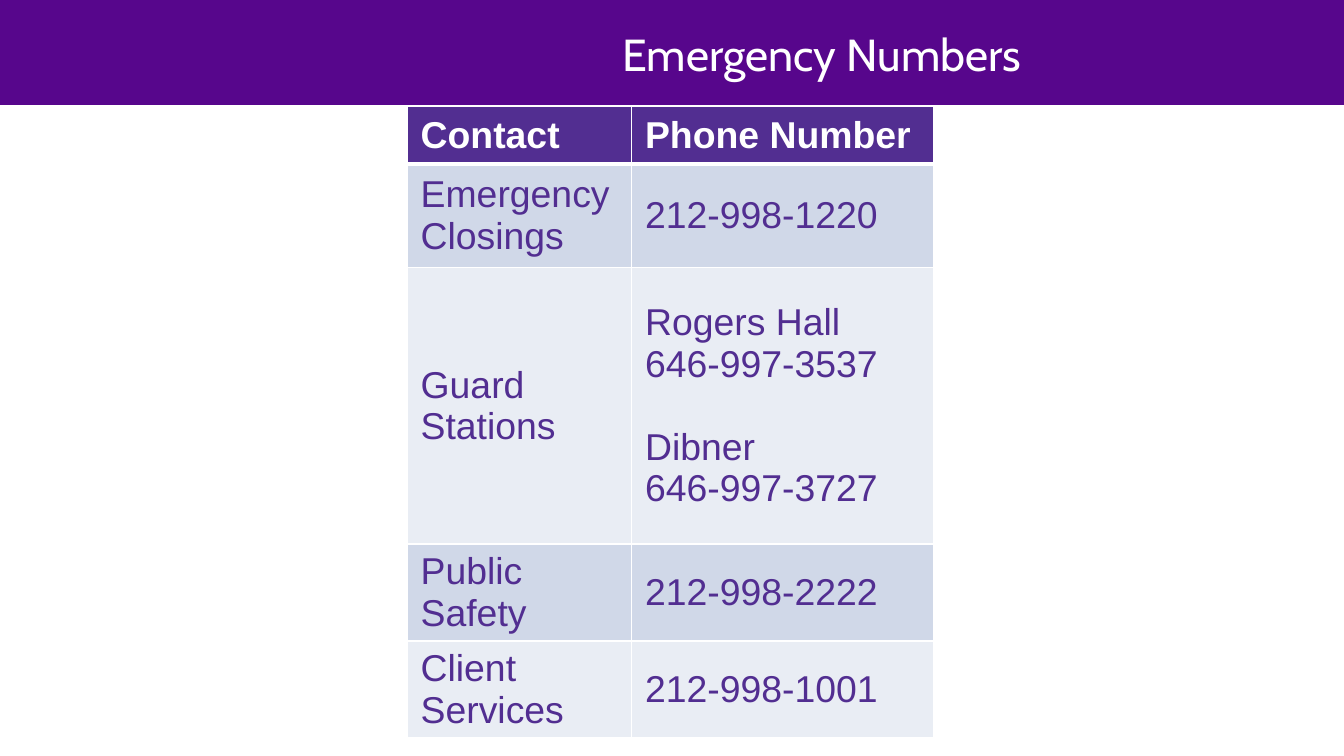
from lxml import etree
from pptx import Presentation, util as u
from pptx.dml.color import RGBColor
from pptx.enum import shapes, text
from pptx.oxml import ns

WHITE = RGBColor(0xFF, 0xFF, 0xFF)
BAND = RGBColor(0x57, 0x06, 0x8C)
VIOLET = RGBColor(0x52, 0x2E, 0x91)
ROW_DARK = RGBColor(0xD0, 0xD8, 0xE8)
ROW_LIGHT = RGBColor(0xE9, 0xED, 0xF4)

CONTACTS = [
    ("Contact", [["Phone Number"]]),
    ("Emergency Closings", [["212-998-1220"]]),
    ("Guard Stations", [["Rogers Hall", "646-997-3537"], ["Dibner", "646-997-3727"]]),
    ("Public Safety", [["212-998-2222"]]),
    ("Client Services", [["212-998-1001"]]),
]
COLUMN_WIDTHS = [1.67, 2.25]
ROW_HEIGHTS = [0.43, 0.77, 2.06, 0.72, 0.72]


class SlideBuilder:
    """Holds the style and the current slide, and adds each kind of element."""

    def __init__(self, slide, heading_font="Cabin", table_font="Arial"):
        self.slide = slide
        self.heading_font = heading_font
        self.table_font = table_font

    def add_run(self, paragraph, wording, font, size, color, bold=False):
        run = paragraph.add_run()
        run.text = wording
        run.font.name = font
        run.font.size = u.Pt(size)
        run.font.bold = bold
        run.font.color.rgb = color

    def add_band(self, width, height):
        band = self.slide.shapes.add_shape(
            shapes.MSO_SHAPE.RECTANGLE, 0, 0, u.Inches(width), u.Inches(height))
        band.shadow.inherit = False
        band.fill.solid()
        band.fill.fore_color.rgb = BAND
        band.line.fill.background()
        self.slide.shapes.title.element.addprevious(band.element)

    def set_title(self, wording, left, top, width, height):
        title = self.slide.shapes.title
        title.left, title.top = u.Inches(left), u.Inches(top)
        title.width, title.height = u.Inches(width), u.Inches(height)
        frame = title.text_frame
        frame.margin_left = frame.margin_right = 0
        frame.margin_top = frame.margin_bottom = 0
        frame.word_wrap = True
        frame.auto_size = text.MSO_AUTO_SIZE.NONE
        frame.vertical_anchor = text.MSO_ANCHOR.MIDDLE
        heading = frame.paragraphs[0]
        heading.alignment = text.PP_ALIGN.CENTER
        self.add_run(heading, wording, self.heading_font, 24, WHITE)

    def set_borders(self, cell, row):
        properties = cell._tc.get_or_add_tcPr()
        widths = {"L": 1, "R": 1, "T": 3 if row == 1 else 1, "B": 3 if row == 0 else 1}
        for side, width in widths.items():
            line = etree.SubElement(properties, ns.qn(f"a:ln{side}"), w=str(u.Pt(width)))
            fill = etree.SubElement(line, ns.qn("a:solidFill"))
            etree.SubElement(fill, ns.qn("a:srgbClr"), val=str(WHITE))

    def fill_cell(self, cell, row, groups):
        self.set_borders(cell, row)
        header = row == 0
        cell.fill.solid()
        cell.fill.fore_color.rgb = VIOLET if header else ROW_DARK if row % 2 else ROW_LIGHT
        cell.vertical_anchor = text.MSO_ANCHOR.MIDDLE
        frame = cell.text_frame
        for group_index, group in enumerate(groups):
            for line_index, wording in enumerate(group):
                first = group_index == line_index == 0
                paragraph = frame.paragraphs[0] if first else frame.add_paragraph()
                if group_index and line_index == 0:
                    paragraph.space_before = u.Pt(22)
                self.add_run(paragraph, wording, self.table_font, 20,
                             WHITE if header else VIOLET, header)

    def add_contacts(self, left, top):
        table = self.slide.shapes.add_table(
            len(CONTACTS), len(COLUMN_WIDTHS), u.Inches(left), u.Inches(top),
            u.Inches(sum(COLUMN_WIDTHS)), u.Inches(sum(ROW_HEIGHTS))).table
        table.horz_banding = False
        for column, width in zip(table.columns, COLUMN_WIDTHS):
            column.width = u.Inches(width)
        for row, (contact, numbers) in enumerate(CONTACTS):
            table.rows[row].height = u.Inches(ROW_HEIGHTS[row])
            self.fill_cell(table.cell(row, 0), row, [[contact]])
            self.fill_cell(table.cell(row, 1), row, numbers)


def main():
    deck = Presentation()
    deck.slide_width = u.Inches(10)
    deck.slide_height = deck.slide_width * 9 // 16
    builder = SlideBuilder(deck.slides.add_slide(deck.slide_layouts[5]))
    builder.add_band(10.01, 0.78)
    builder.set_title("Emergency Numbers", 2.48, 0.25, 7.27, 0.29)
    builder.add_contacts(3.03, 0.79)
    deck.save("out.pptx")


if __name__ == "__main__":
    main()
